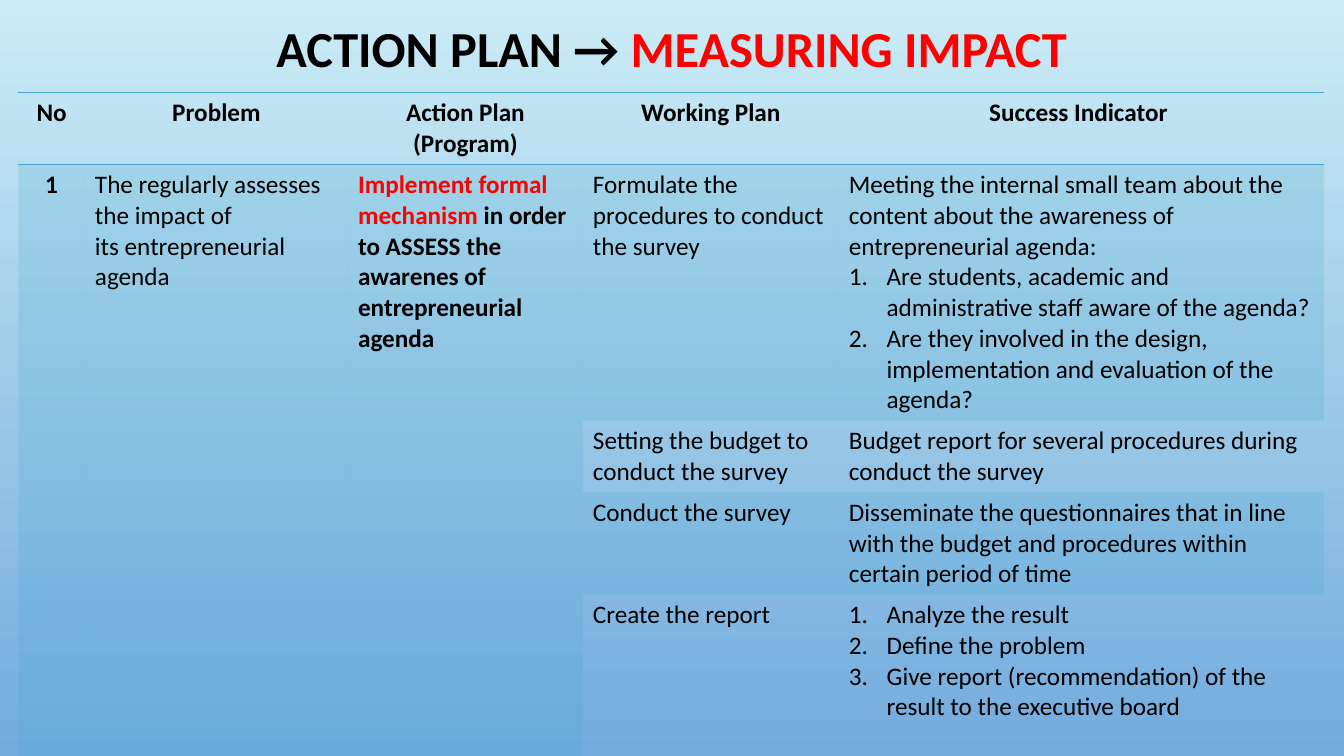
from lxml import etree
from pptx import Presentation, util as u
from pptx.dml.color import RGBColor
from pptx.enum import text
from pptx.oxml.ns import qn

BLACK, RED, ACCENT = "000000", "FF0000", "48A8D0"
NO_STYLE = "{2D5ABB26-0587-4C30-8999-92F81FD0307C}"
CENTER = text.PP_ALIGN.CENTER


def color(hex_code):
    return RGBColor.from_string(hex_code)


class Numbered(str):
    """A paragraph of a numbered list."""


class PlanSlide:
    font = "Calibri"

    def __init__(self, prs):
        self.slide = prs.slides.add_slide(prs.slide_layouts[5])

    def background(self, top, bottom):
        fill = self.slide.background.fill
        fill.gradient()
        fill.gradient_angle = 270
        for stop, shade in zip(fill.gradient_stops, (top, bottom)):
            stop.color.rgb = color(shade)

    def add_runs(self, paragraph, runs, size, bold=False, align=None):
        """Fill a paragraph with (wording, colour) runs."""
        paragraph.alignment = align
        font = paragraph.font
        font.name, font.size, font.bold = self.font, u.Pt(size), bold
        for wording, shade in runs:
            run = paragraph.add_run()
            run.text = wording
            run.font.color.rgb = color(shade)

    def title(self, runs, left, top, width, height):
        heading = self.slide.shapes.title
        heading.left, heading.top = u.Cm(left), u.Cm(top)
        heading.width, heading.height = u.Cm(width), u.Cm(height)
        frame = heading.text_frame
        frame.auto_size = text.MSO_AUTO_SIZE.NONE
        frame.vertical_anchor = text.MSO_ANCHOR.MIDDLE
        frame.paragraphs[0].line_spacing = 0.9
        self.add_runs(frame.paragraphs[0], runs, 36, True, CENTER)

    def table(self, left, top, widths, heights):
        frame = self.slide.shapes.add_table(
            len(heights), len(widths), u.Cm(left), u.Cm(top),
            u.Cm(sum(widths)), u.Cm(sum(heights)))
        grid = frame.table
        grid.first_row = grid.horz_banding = False
        grid._tbl.tblPr.find(qn("a:tableStyleId")).text = NO_STYLE
        for column, width in zip(grid.columns, widths):
            column.width = u.Cm(width)
        for row, height in zip(grid.rows, heights):
            row.height = u.Cm(height)
        return grid

    def cell(self, cell, paragraphs, bold=False, align=None):
        """Each paragraph is a string, a list of runs or a Numbered item."""
        frame = cell.text_frame
        for i, content in enumerate(paragraphs):
            paragraph = frame.add_paragraph() if i else frame.paragraphs[0]
            if isinstance(content, Numbered):
                self.number(paragraph)
            runs = content if isinstance(content, list) else [(content, BLACK)]
            self.add_runs(paragraph, runs, 18, bold, align)

    def number(self, paragraph):
        props = paragraph._p.get_or_add_pPr()
        props.set("marL", str(u.Cm(0.95)))
        props.set("indent", str(-u.Cm(0.95)))
        etree.SubElement(props, qn("a:buFont"), typeface="+mj-lt")
        etree.SubElement(props, qn("a:buAutoNum"), type="arabicPeriod")

    def tint(self, cell, shade, alpha):
        cell.fill.solid()
        cell.fill.fore_color.rgb = color(shade)
        srgb = cell._tc.tcPr.find(".//" + qn("a:srgbClr"))
        etree.SubElement(srgb, qn("a:alpha"), val=str(alpha * 1000))

    def borders(self, cell, sides):
        props = cell._tc.get_or_add_tcPr()
        for i, side in enumerate(sides):
            line = etree.Element(qn("a:ln" + side), w=str(u.Pt(1)))
            fill = etree.SubElement(line, qn("a:solidFill"))
            etree.SubElement(fill, qn("a:srgbClr"), val=ACCENT)
            props.insert(i, line)


HEADERS = ["No", "Problem", "Action Plan (Program)", "Working Plan",
           "Success Indicator "]
PROBLEM = ["The regularly assesses the impact of", "its entrepreneurial agenda"]
PROGRAM = [[("Implement formal mechanism ", RED),
            ("in order to ASSESS the awarenes of entrepreneurial agenda", BLACK)]]
STEPS = [
    ("Formulate the procedures to conduct the survey",
     ["Meeting the internal small team about the content about the awareness "
      "of entrepreneurial agenda:",
      Numbered("Are students, academic and administrative staff aware of the agenda?"),
      Numbered("Are they involved in the design, implementation and evaluation "
               "of the agenda?")]),
    ("Setting the budget to conduct the survey",
     ["Budget report for several procedures during conduct the survey"]),
    ("Conduct the survey",
     ["Disseminate the questionnaires that in line with the budget and "
      "procedures within certain period of time"]),
    ("Create the report",
     [Numbered("Analyze the result"),
      Numbered("Define the problem"),
      Numbered("Give report (recommendation) of the result to the executive board")]),
]


def main():
    prs = Presentation()
    prs.slide_width, prs.slide_height = u.Cm(33.87), u.Cm(19.05)
    page = PlanSlide(prs)
    page.background("CBECF5", "73ABDD")
    page.title([("ACTION PLAN → ", BLACK), ("MEASURING IMPACT", RED)],
               2.54, 0.46, 28.78, 1.65)

    # Header row
    plan = page.table(0.46, 2.34, [1.68, 6.63, 5.92, 6.45, 12.22],
                      [1.52, 5.46, 1.52, 2.18, 4.47])
    for col, header in enumerate(HEADERS):
        page.cell(plan.cell(0, col), [header], True, CENTER)
        page.borders(plan.cell(0, col), "TB")

    # Problem and program, spanning all steps
    page.cell(plan.cell(1, 0), ["1"], True, CENTER)
    page.cell(plan.cell(1, 1), PROBLEM)
    page.cell(plan.cell(1, 2), PROGRAM, True)
    last = len(STEPS)
    for col in range(3):
        topic = plan.cell(1, col)
        topic.merge(plan.cell(last, col))
        page.tint(topic, ACCENT, 20)
        page.borders(topic, "B")

    # Steps with their indicators, every other row tinted
    for row, (step, indicators) in enumerate(STEPS, 1):
        for col, paragraphs in ((3, [step]), (4, indicators)):
            entry = plan.cell(row, col)
            page.cell(entry, paragraphs)
            if row % 2:
                page.tint(entry, ACCENT, 20)
            if row == last:
                page.borders(entry, "B")

    prs.save("out.pptx")


if __name__ == "__main__":
    main()
